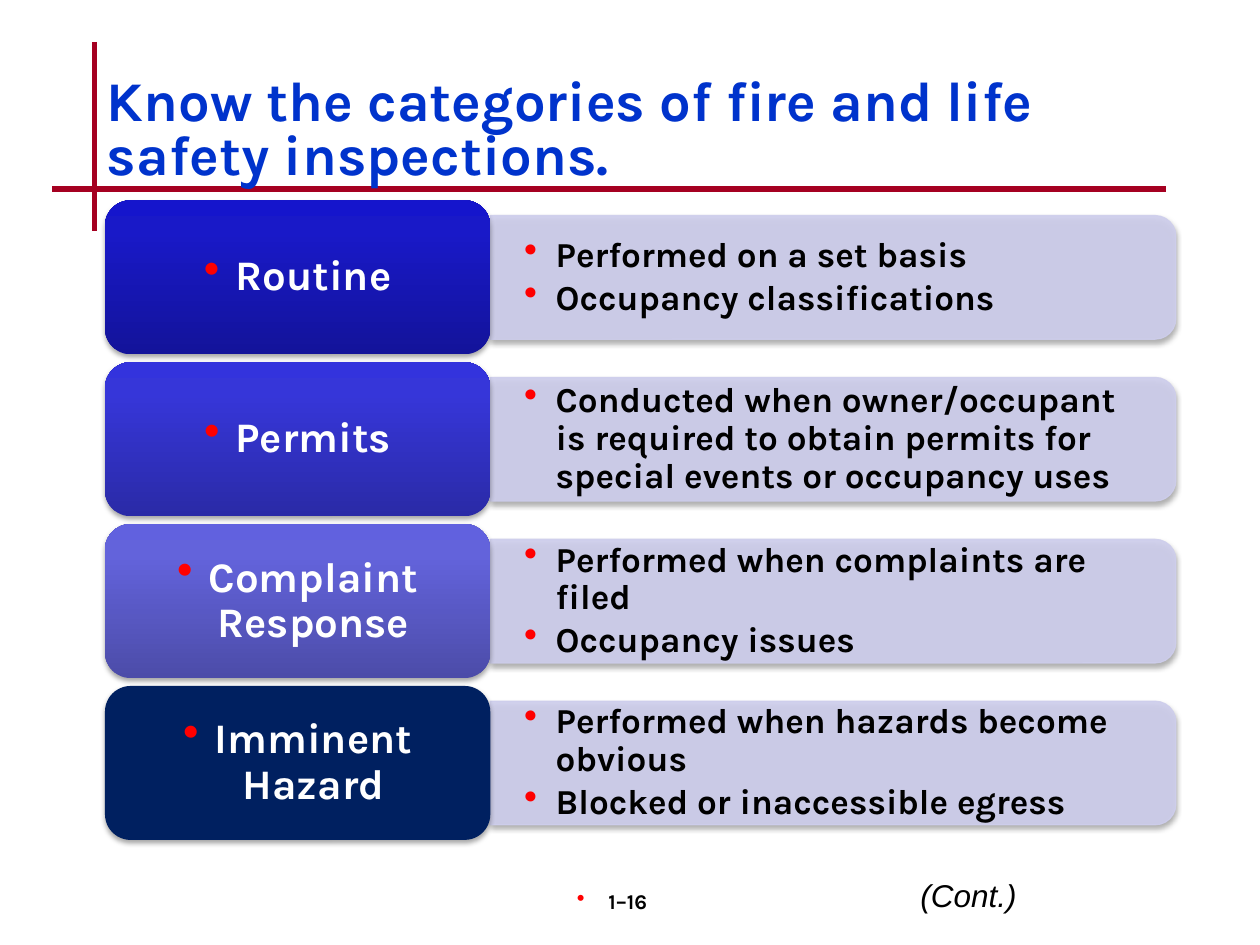
"""Build a slide listing the categories of fire and life safety inspections."""
from lxml import etree
from pptx import Presentation
from pptx.dml.color import RGBColor
from pptx.enum.shapes import MSO_CONNECTOR, MSO_SHAPE
from pptx.enum.text import MSO_ANCHOR, PP_ALIGN
from pptx.oxml.ns import qn
from pptx.util import Pt

LEFT, CENTER, RIGHT = PP_ALIGN.LEFT, PP_ALIGN.CENTER, PP_ALIGN.RIGHT
TOP, MIDDLE = MSO_ANCHOR.TOP, MSO_ANCHOR.MIDDLE
CARD, PANEL = MSO_SHAPE.ROUNDED_RECTANGLE, MSO_SHAPE.ROUND_2_SAME_RECTANGLE

COLORS = {"rule": "A50021", "title": "0033CC", "panel": "CECEEC",
          "bullet": "FF0000", "text": "000000", "label": "FFFFFF"}
TITLE = "Know the categories of fire and life safety inspections."
CATEGORIES = [
    ("Routine", ["13139A", "1919C8", "1515CC"],
     ["Performed on a set basis", "Occupancy classifications"]),
    ("Permits", ["2A2AA7", "3636D9", "3333DD"],
     ["Conducted when owner/occupant is required to obtain permits "
      "for special events or occupancy uses"]),
    ("Complaint Response", ["4C4CA9", "6363DB", "6161DF"],
     ["Performed when complaints are filed", "Occupancy issues"]),
    ("Imminent Hazard", ["002060"],
     ["Performed when hazards become obvious", "Blocked or inaccessible egress"]),
]
RULES = [(54, 24, 54, 132), (30, 108, 666, 108)]
STOPS = (0, 80, 100)
CARD_X, CARD_Y, CARD_W, CARD_H, PITCH = 60, 114.5, 220.2, 88, 92.5
PANEL_W, PANEL_H, TEXT_W, TEXT_H = 391.7, 70.6, 388, 63.4
INDENT = 18


def rgb(name):
    return RGBColor.from_string(COLORS[name])


def sub(parent, tag, **attrs):
    return etree.SubElement(parent, qn("a:" + tag), {k: str(v) for k, v in attrs.items()})


def add_color(parent, value, alpha=None):
    clr = sub(parent, "srgbClr", val=value)
    if alpha:
        sub(clr, "alpha", val=alpha * 1000)


def add_shadow(s):
    s.shadow.inherit = False
    effects = s._element.spPr.find(qn("a:effectLst"))
    shadow = sub(effects, "outerShdw", blurRad=Pt(3.1), dist=Pt(1.8),
                 dir=5400000, rotWithShape=0)
    add_color(shadow, "000000", 35)


def add_gradient(s, colors):
    s.fill.gradient()
    grad = s._element.spPr.find(qn("a:gradFill"))
    for child in list(grad):
        grad.remove(child)
    stops = sub(grad, "gsLst")
    for pos, color in zip(STOPS, colors):
        add_color(sub(stops, "gs", pos=pos * 1000), color)
    sub(grad, "lin", ang=16200000, scaled=0)


def write(s, lines, size, color, align=LEFT, anchor=MIDDLE, insets=(7.2, 3.6, 7.2, 3.6),
          bullet=False, spacing=None, after=0, font="Karla", bold=True, italic=False):
    tf = s.text_frame
    tf.word_wrap, tf.vertical_anchor = True, anchor
    tf.margin_left, tf.margin_top, tf.margin_right, tf.margin_bottom = map(Pt, insets)
    for i, line in enumerate(lines):
        p = tf.paragraphs[0] if i == 0 else tf.add_paragraph()
        p.text, p.alignment = line, align
        if spacing:
            p.line_spacing = spacing
        p.space_after = Pt(after)
        if bullet:
            pPr = p._p.get_or_add_pPr()
            pPr.set("marL", str(Pt(INDENT)))
            pPr.set("indent", str(-Pt(INDENT)))
            add_color(sub(pPr, "buClr"), COLORS["bullet"])
            sub(pPr, "buSzPct", val=110000)
            sub(pPr, "buChar", char="•")
        f = p.font
        f.name, f.size, f.bold, f.italic = font, Pt(size), bold, italic
        f.color.rgb = rgb(color)


def add_text(slide, x, y, w, h, lines, *args, **kwargs):
    s = slide.shapes.add_textbox(Pt(x), Pt(y), Pt(w), Pt(h))
    write(s, lines, *args, **kwargs)


def add_rule(slide, *ends):
    s = slide.shapes.add_connector(MSO_CONNECTOR.STRAIGHT, *map(Pt, ends))
    s.line.color.rgb, s.line.width = rgb("rule"), Pt(3)
    sub(s._element.spPr, "effectLst")


def add_panel(slide, x, middle, lines):
    s = slide.shapes.add_shape(PANEL, Pt(x + (PANEL_W - PANEL_H) / 2),
                               Pt(middle - PANEL_W / 2), Pt(PANEL_H), Pt(PANEL_W))
    s.rotation = 90
    s.fill.solid()
    s.fill.fore_color.rgb = s.line.color.rgb = rgb("panel")
    s.line.width = Pt(0.75)
    for clr in s._element.spPr.iter(qn("a:srgbClr")):
        sub(clr, "alpha", val=90000)
    add_shadow(s)
    add_text(slide, x, middle - TEXT_H / 2, TEXT_W, TEXT_H, lines, 20, "text",
             insets=(19.4, 10.1, 19.4, 10.1), bullet=True, spacing=0.9, after=3)


def add_card(slide, y, label, colors):
    s = slide.shapes.add_shape(CARD, Pt(CARD_X), Pt(y), Pt(CARD_W), Pt(CARD_H))
    if len(colors) > 1:
        add_gradient(s, colors)
    else:
        s.fill.solid()
        s.fill.fore_color.rgb = RGBColor.from_string(colors[0])
    s.line.fill.background()
    add_shadow(s)
    write(s, [label], 24, "label", align=CENTER, bullet=True, spacing=0.9)


def main():
    prs = Presentation()
    prs.slide_width, prs.slide_height = Pt(720), Pt(540)
    slide = prs.slides.add_slide(prs.slide_layouts[6])
    for ends in RULES:
        add_rule(slide, *ends)
    add_text(slide, 54, 39.6, 612, 72, [TITLE], 32, "title", spacing=0.8)
    for i, (label, colors, lines) in enumerate(CATEGORIES):
        y = CARD_Y + i * PITCH
        add_panel(slide, CARD_X + CARD_W, y + CARD_H / 2, lines)
        add_card(slide, y, label, colors)
    add_text(slide, 282, 504, 150, 36, ["1–16"], 12, "text", align=CENTER, anchor=TOP,
             insets=(7.2, 3.6, 21.6, 3.6), bullet=True)
    add_text(slide, 468, 496.8, 120, 28.8, ["(Cont.)"], 18, "text", align=RIGHT,
             anchor=TOP, font="Arial", bold=False, italic=True)
    prs.save("out.pptx")


if __name__ == "__main__":
    main()
